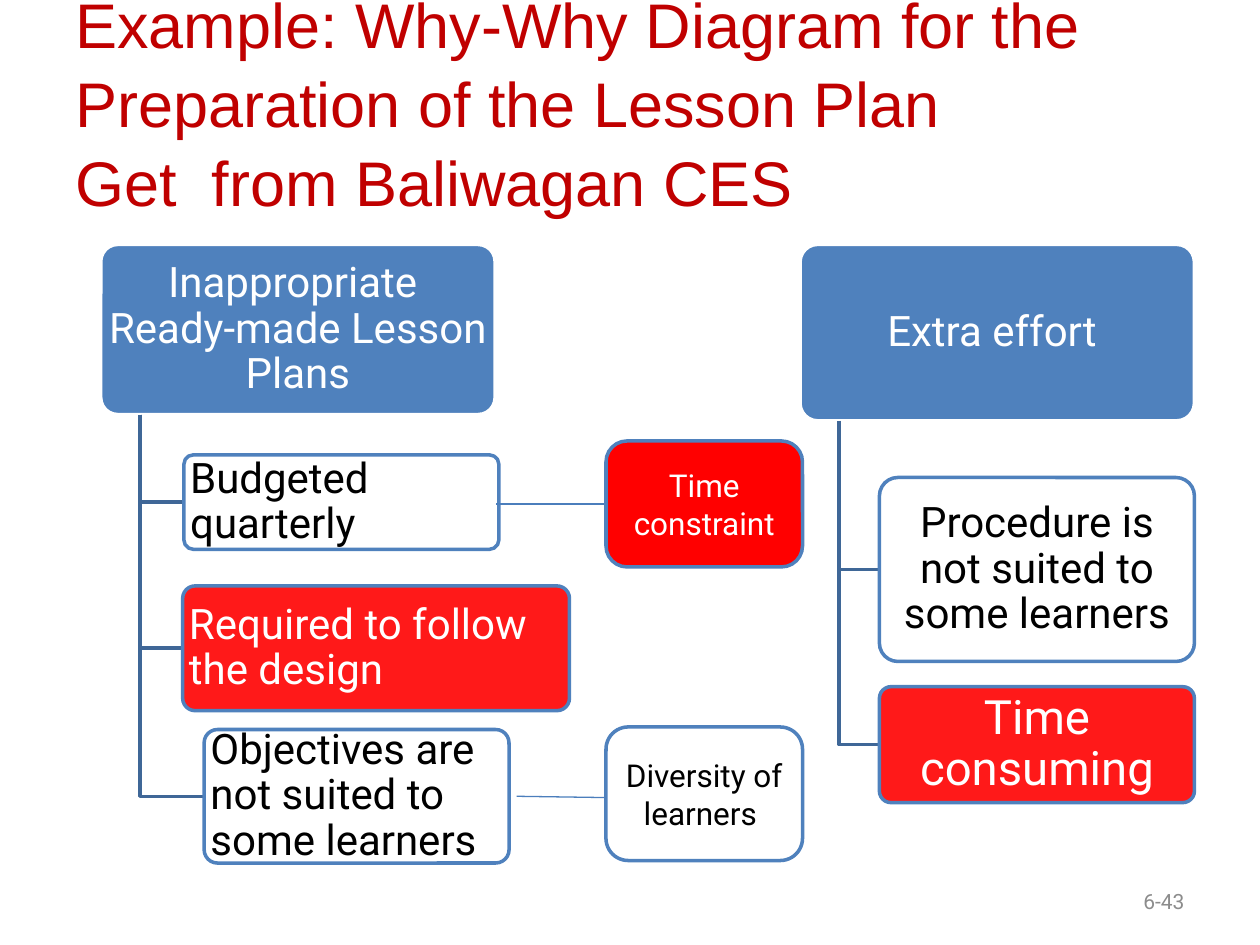
from lxml.etree import SubElement
from pptx import Presentation
from pptx.dml.color import RGBColor
from pptx.enum.shapes import MSO_CONNECTOR, MSO_SHAPE
from pptx.enum.text import MSO_ANCHOR, PP_ALIGN
from pptx.oxml.ns import qn
from pptx.util import Inches, Pt

WHITE = RGBColor(0xFF, 0xFF, 0xFF)
BLACK = RGBColor(0x00, 0x00, 0x00)
BLUE = RGBColor(0x4F, 0x81, 0xBD)
BRANCH_BLUE = RGBColor(0x3F, 0x67, 0x97)
LINK_BLUE = RGBColor(0x4B, 0x7E, 0xBC)
RED = RGBColor(0xFF, 0x00, 0x00)
TITLE_RED = RGBColor(0xC0, 0x00, 0x00)
GRAY = RGBColor(0x8C, 0x8C, 0x8C)

LEFT, CENTER, RIGHT = PP_ALIGN.LEFT, PP_ALIGN.CENTER, PP_ALIGN.RIGHT
CORNER = 0.1
TRUNK_INDENT = 0.31

# Head: text, place; reasons: text, place, fill, text colour, size, alignment
TREES = [
    ("Inappropriate  Ready-made Lesson Plans", (0.8, 1.94, 3.13, 1.35), [
        ("Budgeted quarterly", (1.46, 3.61, 2.5, 0.75), WHITE, BLACK, 24, LEFT),
        ("Required to follow the design", (1.45, 4.65, 3.07, 0.99), RED, WHITE, 24, LEFT),
        ("Objectives are not suited to some learners", (1.62, 5.79, 2.42, 1.06),
         WHITE, BLACK, 24, LEFT),
    ]),
    ("Extra effort ", (6.35, 1.94, 3.13, 1.4), [
        ("Procedure is not suited to some learners", (6.98, 3.79, 2.5, 1.46),
         WHITE, BLACK, 24, CENTER),
        ("Time consuming", (6.98, 5.45, 2.5, 0.92), RED, WHITE, 27, CENTER),
    ]),
]

# Text, place, fill, text colour, start and end of the link line
ROOT_CAUSES = [
    ("Time constraint", (4.81, 3.5, 1.56, 1), RED, WHITE, (3.94, 4), (4.81, 4)),
    ("Diversity of learners ", (4.81, 5.77, 1.56, 1.06), WHITE, BLACK,
     (4.1, 6.32), (4.81, 6.33)),
]


def write(frame, lines, size, color, align, font="Roboto", spacing=1.0):
    frame.word_wrap = True
    frame.vertical_anchor = MSO_ANCHOR.MIDDLE
    paragraph = frame.paragraphs[0]
    paragraph.alignment = align
    paragraph.line_spacing = spacing
    for index, line in enumerate(lines):
        if index:
            paragraph.add_line_break()
        run = paragraph.add_run()
        run.text = line
        run.font.name = font
        run.font.size = Pt(size)
        run.font.color.rgb = color


def add_label(slide, place, lines, size, color, align, **style):
    label = slide.shapes.add_textbox(*map(Inches, place))
    write(label.text_frame, lines, size, color, align, **style)


def add_box(slide, place, fill, border):
    box = slide.shapes.add_shape(MSO_SHAPE.ROUNDED_RECTANGLE, *map(Inches, place))
    box.shadow.inherit = False
    box.fill.solid()
    box.fill.fore_color.rgb = fill
    box.line.color.rgb = border
    box.line.width = Pt(2)
    return box


def add_tree_box(slide, text, place, fill, color, size, align, border=BLUE, opacity=90):
    box = add_box(slide, place, fill, border)
    box.adjustments[0] = CORNER
    if opacity < 100:
        fill_color = box.fill._xPr.find(qn("a:solidFill"))[0]
        SubElement(fill_color, qn("a:alpha"), val=str(opacity * 1000))
    # The rounded corner already insets the text by 0.29 of its radius
    frame = box.text_frame
    frame.margin_left = frame.margin_right = Inches(0.05 - 0.29 * CORNER * place[3])
    frame.margin_top = frame.margin_bottom = 0
    write(frame, [text], size, color, align, spacing=0.9)


def add_branch(slide, head, reason):
    trunk = Inches(head[0] + TRUNK_INDENT)
    middle = Inches(reason[1] + reason[3] / 2)
    builder = slide.shapes.build_freeform(trunk, Inches(head[1] + head[3]))
    builder.add_line_segments([(trunk, middle), (Inches(reason[0]), middle)], close=False)
    branch = builder.convert_to_shape()
    branch.shadow.inherit = False
    branch.fill.background()
    branch.line.color.rgb = BRANCH_BLUE
    branch.line.width = Pt(2)


def add_tree(slide, text, head, reasons):
    add_tree_box(slide, text, head, BLUE, WHITE, 24, CENTER, border=WHITE, opacity=100)
    for reason in reasons:
        add_branch(slide, head, reason[1])
        add_tree_box(slide, *reason)


def add_root_cause(slide, text, place, fill, color, start, end):
    link = slide.shapes.add_connector(
        MSO_CONNECTOR.STRAIGHT, *map(Inches, start + end))
    link.line.color.rgb = LINK_BLUE
    link.line.width = Pt(0.75)
    SubElement(link._element.spPr, qn("a:effectLst"))
    cause = add_box(slide, place, fill, BLUE)
    write(cause.text_frame, [text], 18, color, CENTER)


def main():
    prs = Presentation()
    prs.slide_width, prs.slide_height = Inches(10), Inches(7.5)
    slide = prs.slides.add_slide(prs.slide_layouts[6])

    # Title
    add_label(slide, (0.5, 0.39, 9, 0.82),
              ["Example: Why-Why Diagram for the Preparation of the Lesson Plan ",
               "Get  from Baliwagan CES"],
              36, TITLE_RED, LEFT, font="Arial", spacing=1.04)

    # Problems with their reasons
    for tree in TREES:
        add_tree(slide, *tree)

    # Root causes
    for cause in ROOT_CAUSES:
        add_root_cause(slide, *cause)

    # Page number
    add_label(slide, (7.17, 6.95, 2.33, 0.4), ["6-43"], 12, GRAY, RIGHT)

    prs.save("out.pptx")


if __name__ == "__main__":
    main()
